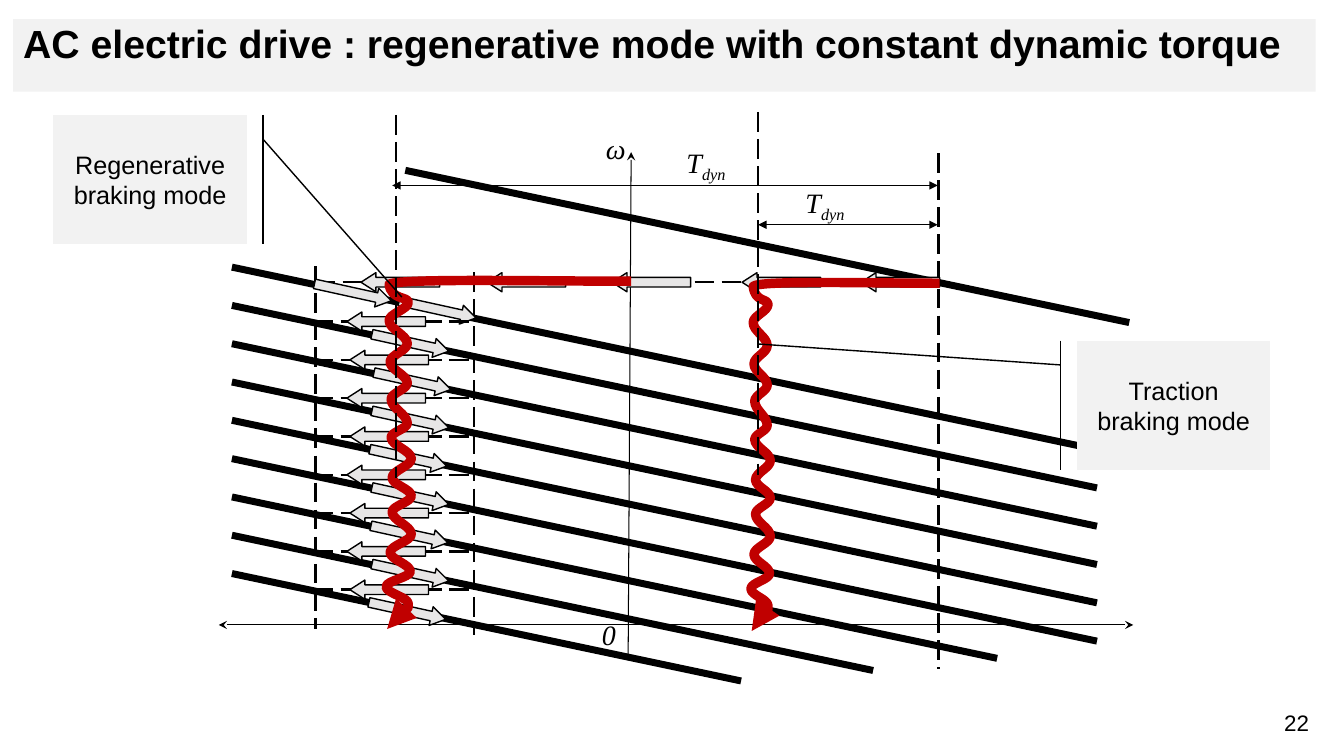
from lxml import etree
from pptx import Presentation
from pptx.dml import color
from pptx.enum import dml, shapes, text
from pptx.oxml import ns
from pptx.util import Inches, Pt

BLACK, PALE, GREY, RED = "000000", "F2F2F2", "E7E6E6", "C00000"
ROW_STEP = 0.38
LEFTWARD, DOWNSLOPE = 270, 102.4

WAVE_START = (0.02, 3.46)
WAVE_TIP = [(0.02, 3.42), (0.23, 3.28), (0.23, 3.21)]
WAVE_TURNS = [
    (0.01, 3.04), (0.25, 2.89), (0.05, 2.7), (0.26, 2.52),
    (0.07, 2.3), (0.26, 2.14), (0.07, 1.96), (0.26, 1.77),
    (0.06, 1.56), (0.22, 1.42), (0.06, 1.18), (0.22, 1.02),
    (0.05, 0.81), (0.22, 0.63), (0.04, 0.4), (0.23, 0.22),
]
WAVE_CORNER = [(0.23, 0.16), (0.06, 0.2), (0.04, 0.04)]
WAVE_RUN = [(0.15, -0.02), (1.5, 0.01), (2.44, 0.01)]


def rgb(value):
    return color.RGBColor.from_string(value)


def style_span(span, size, font="Arial", bold=False, italic=False):
    span.font.size = Pt(size)
    span.font.name = font
    span.font.bold = bold
    span.font.italic = italic
    span.font.color.rgb = rgb(BLACK)


def style_line(shape, width, value=BLACK, dashed=False, head=None, tail=None):
    shape.line.color.rgb = rgb(value)
    shape.line.width = Pt(width)
    if dashed:
        shape.line.dash_style = dml.MSO_LINE.LONG_DASH
    outline = shape.line._get_or_add_ln()
    for tag, kind in (("a:headEnd", head), ("a:tailEnd", tail)):
        if kind:
            etree.SubElement(outline, ns.qn(tag), type=kind)


def add_line(page, box, start, end, width, **style):
    left, top = box[:2]
    line = page.shapes.add_connector(
        shapes.MSO_CONNECTOR.STRAIGHT,
        Inches(left + start[0]), Inches(top + start[1]),
        Inches(left + end[0]), Inches(top + end[1]))
    style_line(line, width, **style)
    etree.SubElement(line._element.spPr, ns.qn("a:effectLst"))


def add_dash(page, box, start, end):
    add_line(page, box, start, end, 1.75, dashed=True)


def add_block_arrow(page, box, x, y, rotation):
    width, length = 0.19, 0.78
    arrow = page.shapes.add_shape(
        shapes.MSO_SHAPE.UP_ARROW,
        Inches(box[0] + x - width / 2), Inches(box[1] + y - length / 2),
        Inches(width), Inches(length))
    arrow.rotation = rotation
    arrow.adjustments[0] = 0.5
    arrow.adjustments[1] = 0.781
    arrow.shadow.inherit = False
    arrow.fill.solid()
    arrow.fill.fore_color.rgb = rgb(GREY)
    style_line(arrow, 1)


def add_symbol(page, box, x, y, width, symbol, subscript=""):
    label = page.shapes.add_textbox(
        Inches(box[0] + x), Inches(box[1] + y), Inches(width), Inches(0.58))
    label.text_frame.word_wrap = True
    para = label.text_frame.paragraphs[0]
    para.line_spacing = 1.15
    para.space_after = Pt(10)
    for content in filter(None, (symbol, subscript)):
        span = para.add_run()
        span.text = content
        style_span(span, 20, "Times New Roman", italic=True)
        if content == subscript:
            span.font._element.set("baseline", "-25000")


def add_wave(page, box, x, y, stretch):
    points = list(WAVE_TIP)
    for turn_x, turn_y in WAVE_TURNS:
        last_x, last_y = points[-1]
        pull = 0.38 * (last_y - turn_y)
        points += [(last_x, last_y - pull), (turn_x, turn_y + pull), (turn_x, turn_y)]
    points += WAVE_CORNER + WAVE_RUN

    def place(point):
        return (Inches(box[0] + x + point[0] * stretch),
                Inches(box[1] + y + point[1]))

    builder = page.shapes.build_freeform(*place(WAVE_START), scale=1.0)
    builder.add_line_segments([place(point) for point in points], close=False)
    wave = builder.convert_to_shape()
    wave.shadow.inherit = False
    wave.fill.background()
    style_line(wave, 6.75, RED, head="triangle")
    outline = wave._element.xpath(".//a:path")[0]
    steps = outline.findall(ns.qn("a:lnTo"))
    for first in range(0, len(steps), 3):
        curve = etree.SubElement(outline, ns.qn("a:cubicBezTo"))
        for step in steps[first:first + 3]:
            curve.append(step[0])
            outline.remove(step)


def add_characteristic(page, box, row):
    x, y = 0.3, 1.65 + ROW_STEP * row
    end = {6: 7.89, 7: 6.66, 8: 5.35}.get(row, 8.88)
    add_line(page, box, (x, y), (end, y + 0.211 * (end - x)), 5)


def add_diagram(page, box):
    add_line(page, box, (4.26, 0.51), (4.23, 5.53), 0.75, head="stealth")
    add_line(page, box, (0.17, 5.2), (9.24, 5.2), 0.75, head="stealth", tail="stealth")
    add_line(page, box, (2.02, 0.69), (9.2, 2.2), 5)
    add_symbol(page, box, 3.87, 5.03, 0.45, "0")
    add_dash(page, box, (7.31, 0.52), (7.31, 5.64))
    add_dash(page, box, (1.13, 1.8), (7.35, 1.8))
    add_characteristic(page, box, 0)
    for x in (6.93, 5.75, 4.46, 3.22):
        add_block_arrow(page, box, x, 1.8, LEFTWARD)
    add_dash(page, box, (2.7, 1.7), (2.7, 5.3))
    add_dash(page, box, (1.13, 1.64), (1.13, 5.24))
    add_block_arrow(page, box, 1.5, 1.9, DOWNSLOPE)
    add_block_arrow(page, box, 1.97, 1.8, LEFTWARD)
    add_block_arrow(page, box, 2.34, 2.07, DOWNSLOPE)

    for row, slope_x in enumerate((2.07, 2.09, 2.07, 2.05, 2.07, 2.06, 2.07, 2.04)):
        y = 2.19 + ROW_STEP * row
        add_characteristic(page, box, row + 1)
        add_dash(page, box, (1.11, y), (2.68, y))
        add_block_arrow(page, box, 1.86 if row % 2 else 1.83, y, LEFTWARD)
        add_block_arrow(page, box, slope_x, y + 0.21, DOWNSLOPE)

    add_wave(page, box, 1.82, 1.78, 1)
    add_wave(page, box, 5.44, 1.8, 0.77)
    add_dash(page, box, (1.93, 0.14), (1.93, 3.74))
    add_dash(page, box, (5.52, 0.11), (5.52, 3.71))
    for start, y, label_x in ((5.52, 1.23, 5.89), (1.89, 0.84, 4.71)):
        add_line(page, box, (start, y), (7.3, y), 0.5, head="triangle", tail="triangle")
        add_symbol(page, box, label_x, y - 0.5, 1.11, "T", "dyn")
    add_symbol(page, box, 3.91, 0.21, 0.49, "ω")


def add_callout(page, box, content, pointer, flipped=False):
    callout = page.shapes.add_shape(
        shapes.MSO_SHAPE.LINE_CALLOUT_1_ACCENT_BAR, *map(Inches, box))
    for index, value in enumerate((0.188, -0.083, *pointer)):
        callout.adjustments[index] = value
    if flipped:
        callout._element.spPr.xfrm.set("flipH", "1")
    callout.shadow.inherit = False
    callout.fill.solid()
    callout.fill.fore_color.rgb = rgb(PALE)
    style_line(callout, 1)
    frame = callout.text_frame
    frame.text = content
    frame.vertical_anchor = text.MSO_ANCHOR.MIDDLE
    para = frame.paragraphs[0]
    para.alignment = text.PP_ALIGN.CENTER
    style_span(para.runs[0], 18)


def add_title(page, box, content):
    title = page.shapes.title
    title.left, title.top, title.width, title.height = map(Inches, box)
    title.fill.solid()
    title.fill.fore_color.rgb = rgb(PALE)
    frame = title.text_frame
    frame.text = content
    frame.auto_size = text.MSO_AUTO_SIZE.NONE
    frame.vertical_anchor = text.MSO_ANCHOR.TOP
    para = frame.paragraphs[0]
    para.alignment = text.PP_ALIGN.LEFT
    para.line_spacing = 0.9
    style_span(para.runs[0], 28, bold=True)


def add_page_number(page, box, number):
    label = page.shapes.add_textbox(*map(Inches, box))
    label.text_frame.text = number
    para = label.text_frame.paragraphs[0]
    para.alignment = text.PP_ALIGN.CENTER
    style_span(para.runs[0], 16)


def main():
    deck = Presentation()
    deck.slide_width, deck.slide_height = Inches(13.33), Inches(7.5)
    page = deck.slides.add_slide(deck.slide_layouts[5])
    add_title(page, (0.13, 0.19, 12.92, 0.72),
              "AC electric drive : regenerative mode with constant dynamic torque")
    add_diagram(page, (2, 1, 9.24, 5.75))
    add_callout(page, (0.53, 1.14, 1.92, 1.28), "Regenerative braking mode",
                (1.412, -0.8), flipped=True)
    add_callout(page, (10.68, 3.38, 1.92, 1.28), "Traction braking mode",
                (0.026, -1.643))
    add_page_number(page, (12.54, 6.99, 0.64, 0.37), "22")
    deck.save("out.pptx")


if __name__ == "__main__":
    main()
